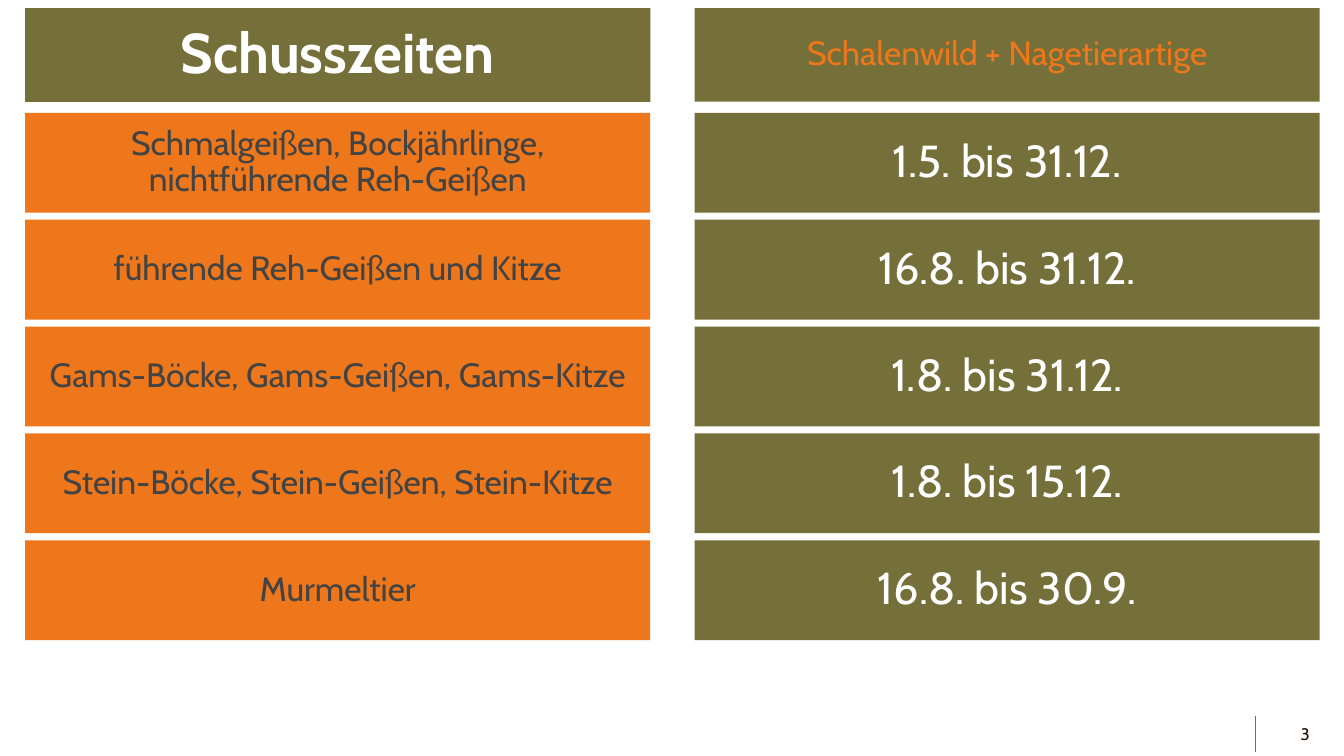
"""Build the slide listing hunting seasons for hoofed game and rodents."""
from dataclasses import dataclass

import pptx
import pptx.dml.color
import pptx.enum.shapes
import pptx.enum.text
import pptx.oxml
import pptx.shapes.autoshape
import pptx.slide
import pptx.util

Inches = pptx.util.Inches
RGBColor = pptx.dml.color.RGBColor
Align = pptx.enum.text.PP_ALIGN

OLIVE = RGBColor(0x75, 0x6F, 0x3A)
ORANGE = RGBColor(0xEE, 0x77, 0x1B)
WHITE = RGBColor(0xFF, 0xFF, 0xFF)
GREY = RGBColor(0x43, 0x43, 0x43)
BROWN = RGBColor(0x23, 0x10, 0x01)
FONT = "Cabin"

GAME_LEFT, SEASON_LEFT, PANEL_WIDTH = 0.25, 6.89, 6.2
HEADER_TOP, HEADER_HEIGHT = 0.08, 0.93
ROW_TOP, ROW_HEIGHT, ROW_PITCH = 1.12, 0.99, 1.06


@dataclass(frozen=True)
class Season:
    game: str
    period: str


SEASONS = (
    Season("Schmalgeißen, Bockjährlinge, nichtführende Reh-Geißen", "1.5. bis 31.12."),
    Season("führende Reh-Geißen und Kitze", "16.8. bis 31.12."),
    Season("Gams-Böcke, Gams-Geißen, Gams-Kitze", "1.8. bis 31.12."),
    Season("Stein-Böcke, Stein-Geißen, Stein-Kitze", "1.8. bis 15.12."),
    Season("Murmeltier", "16.8. bis 30.9."),
)


def write(box: pptx.shapes.autoshape.Shape, text: str, *, size: float, color: RGBColor,
          bold: bool = False, align: Align = Align.CENTER, spacing: float = 0.9) -> None:
    frame = box.text_frame
    frame.word_wrap = True
    frame.auto_size = pptx.enum.text.MSO_AUTO_SIZE.NONE
    frame.vertical_anchor = pptx.enum.text.MSO_ANCHOR.MIDDLE
    para = frame.paragraphs[0]
    para.alignment = align
    para.line_spacing = spacing
    para.space_before = pptx.util.Pt(0)
    span = para.add_run()
    span.text = text
    span.font.name = FONT
    span.font.size = pptx.util.Pt(size)
    span.font.bold = bold
    span.font.color.rgb = color


def add_panel(page: pptx.slide.Slide, left: float, top: float, height: float,
              fill: RGBColor) -> pptx.shapes.autoshape.Shape:
    box = page.shapes.add_shape(
        pptx.enum.shapes.MSO_SHAPE.RECTANGLE,
        Inches(left), Inches(top), Inches(PANEL_WIDTH), Inches(height))
    box.shadow.inherit = False
    box.fill.solid()
    box.fill.fore_color.rgb = fill
    box.line.fill.background()
    return box


def add_header(page: pptx.slide.Slide) -> None:
    title = page.shapes.title
    title.left, title.top = Inches(GAME_LEFT), Inches(HEADER_TOP)
    title.width, title.height = Inches(PANEL_WIDTH), Inches(HEADER_HEIGHT)
    title.fill.solid()
    title.fill.fore_color.rgb = OLIVE
    write(title, "Schusszeiten", size=40, color=WHITE, bold=True)
    subject = add_panel(page, SEASON_LEFT, HEADER_TOP, HEADER_HEIGHT, OLIVE)
    write(subject, "Schalenwild + Nagetierartige", size=24, color=ORANGE)


def add_season(page: pptx.slide.Slide, season: Season, top: float) -> None:
    game = add_panel(page, GAME_LEFT, top, ROW_HEIGHT, ORANGE)
    write(game, season.game, size=24, color=GREY)
    period = add_panel(page, SEASON_LEFT, top, ROW_HEIGHT, OLIVE)
    write(period, season.period, size=32, color=WHITE)


def add_footer(page: pptx.slide.Slide) -> None:
    rule = page.shapes.add_connector(
        pptx.enum.shapes.MSO_CONNECTOR.STRAIGHT,
        Inches(12.45), Inches(7.1), Inches(12.45), Inches(7.46))
    rule.line.color.rgb = OLIVE
    rule.line.width = pptx.util.Pt(0.75)
    properties = rule.element.spPr
    properties.append(properties.makeelement(pptx.oxml.ns.qn("a:effectLst")))
    number = page.shapes.add_textbox(Inches(12.58), Inches(7.08), Inches(0.51), Inches(0.4))
    write(number, "3", size=12, color=BROWN, align=Align.RIGHT, spacing=1.0)


def main() -> None:
    deck = pptx.Presentation()
    deck.slide_width, deck.slide_height = Inches(13.33), Inches(7.5)
    page = deck.slides.add_slide(deck.slide_layouts.get_by_name("Title Only"))
    add_header(page)
    for index, season in enumerate(SEASONS):
        add_season(page, season, ROW_TOP + index * ROW_PITCH)
    add_footer(page)
    deck.save("out.pptx")


if __name__ == "__main__":
    main()
